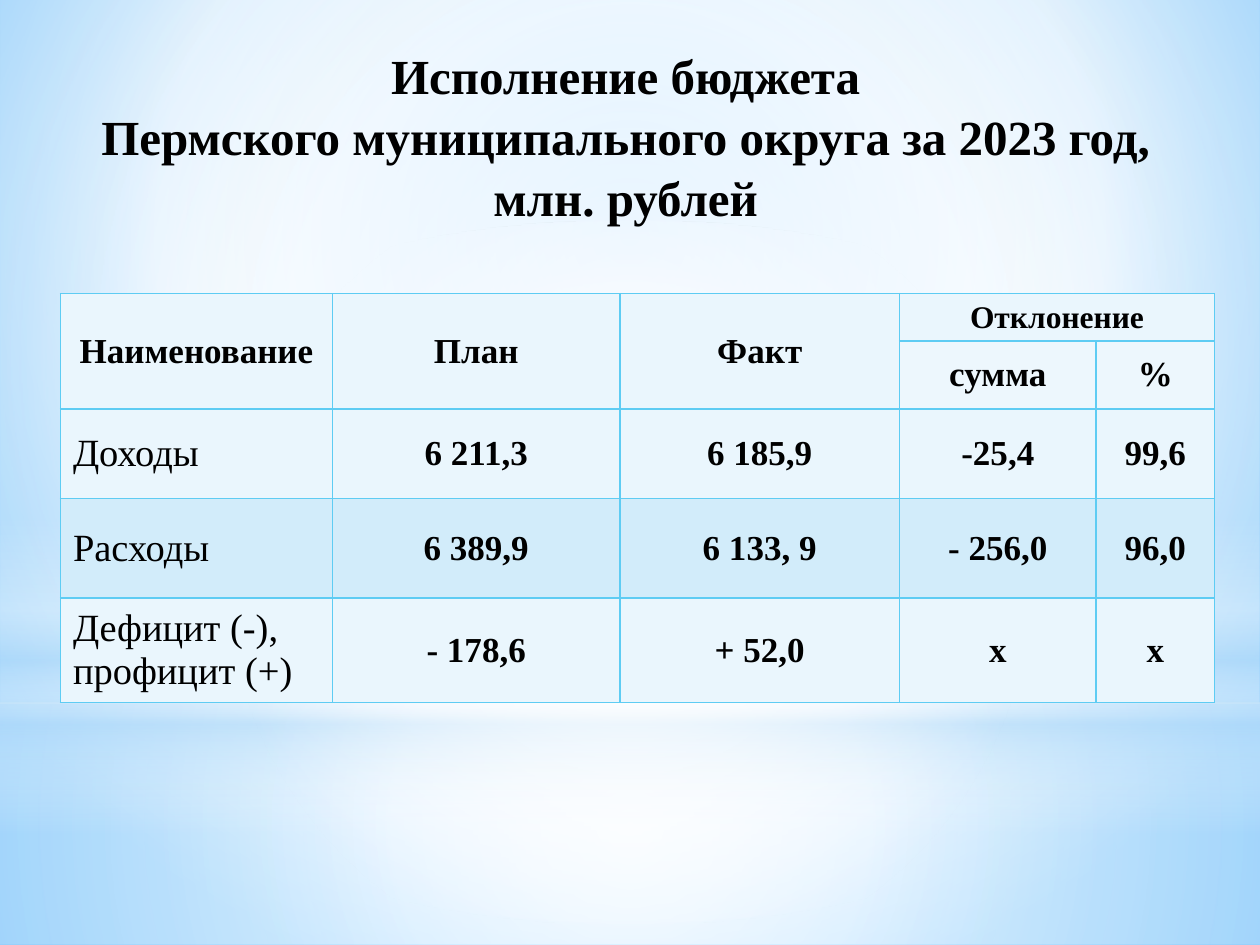
from lxml import etree
from pptx import Presentation
from pptx.dml.color import RGBColor
from pptx.enum.shapes import MSO_SHAPE
from pptx.enum.text import MSO_ANCHOR, PP_ALIGN
from pptx.oxml import parse_xml
from pptx.oxml.ns import nsdecls, qn
from pptx.util import Inches, Pt

RECT, OVAL = MSO_SHAPE.RECTANGLE, MSO_SHAPE.OVAL
MIDDLE = MSO_ANCHOR.MIDDLE
LEFT, CENTER = PP_ALIGN.LEFT, PP_ALIGN.CENTER

FONT = "Times New Roman"
BLACK = RGBColor(0x00, 0x00, 0x00)
WHITE = RGBColor(0xFF, 0xFF, 0xFF)
SKY = RGBColor(0xB4, 0xDC, 0xFA)
BG_LIGHT = RGBColor(0x9E, 0xD5, 0xFF)
BG_DEEP = RGBColor(0x5B, 0xB9, 0xFF)
BORDER = RGBColor(0x5E, 0xCC, 0xF3)
CELL = RGBColor(0xEA, 0xF6, 0xFD)
SUBHEAD = RGBColor(0xED, 0xF7, 0xFD)
BAND = RGBColor(0xD2, 0xEC, 0xFA)

CENTRE = (50, 50, 50, 50)
TITLE = [
    "Исполнение бюджета",
    "Пермского муниципального округа за 2023 год,",
    "млн. рублей",
]
COLS = [2.16, 2.28, 2.22, 1.56, 0.94]
ROWS = [0.37, 0.54, 0.71, 0.79, 0.83]
DATA = [
    ["Наименование", "План", "Факт", "Отклонение", ""],
    ["", "", "", "сумма", "%"],
    ["Доходы", "6 211,3", "6 185,9", "-25,4", "99,6"],
    ["Расходы", "6 389,9", "6 133, 9", "- 256,0", "96,0"],
    ["Дефицит (-), профицит (+)", "- 178,6", "+ 52,0", "х", "х"],
]
ROW_FILLS = [CELL, SUBHEAD, CELL, BAND, CELL]
MERGES = [((0, c), (1, c)) for c in range(3)] + [((0, 3), (0, 4))]


def set_gradient(owner, element, stops, focus=None):
    """Fill with (position, colour, opacity) stops, radial if focus is given."""
    owner.fill.solid()
    solid = next(element.iter(qn("a:solidFill")))
    stop_xml = "".join(
        f'<a:gs pos="{pos * 1000}"><a:srgbClr val="{color}">'
        f'<a:alpha val="{alpha * 1000}"/></a:srgbClr></a:gs>'
        for pos, color, alpha in stops)
    if focus:
        sides = " ".join(f'{k}="{v * 1000}"' for k, v in zip("ltrb", focus))
        shade = f'<a:path path="circle"><a:fillToRect {sides}/></a:path>'
    else:
        shade = '<a:lin ang="5400000" scaled="0"/>'
    grad = parse_xml(f'<a:gradFill {nsdecls("a")} rotWithShape="1">'
                     f'<a:gsLst>{stop_xml}</a:gsLst>{shade}</a:gradFill>')
    solid.getparent().replace(solid, grad)


def add_glow(s, kind, top, height, stops, focus=None):
    sp = s.shapes.add_shape(kind, 0, Inches(top), Inches(10), Inches(height))
    sp.shadow.inherit = False
    sp.line.fill.background()
    set_gradient(sp, sp._element.spPr, stops, focus)


def add_background(s):
    set_gradient(s.background, s._element,
                 [(0, BG_LIGHT, 100), (60, WHITE, 100), (100, BG_DEEP, 100)],
                 (20, 10, 20, 60))
    # Floor, wall, horizon and central light
    add_glow(s, RECT, 5.58, 1.92,
             [(0, WHITE, 91), (37, WHITE, 76), (100, SKY, 79)], CENTRE)
    add_glow(s, RECT, 0, 5.58,
             [(0, WHITE, 89), (48, WHITE, 62), (100, SKY, 79)], CENTRE)
    add_glow(s, RECT, 4.12, 2.5,
             [(0, WHITE, 0), (29, WHITE, 30), (45, SKY, 40),
              (55, WHITE, 26), (65, SKY, 60), (100, WHITE, 0)])
    add_glow(s, OVAL, 1.75, 5.58, [(0, WHITE, 100), (56, WHITE, 0)], CENTRE)


def format_paragraph(p, size, bold, align):
    p.alignment = align
    p.font.name = FONT
    p.font.size = Pt(size)
    p.font.bold = bold
    p.font.color.rgb = BLACK


def add_title(s):
    title = s.shapes.title
    title.left, title.top = Inches(0.12), Inches(0.33)
    title.width, title.height = Inches(9.69), Inches(1.48)
    s.shapes._spTree.append(title._element)  # in front of the background
    tf = title.text_frame
    tf.word_wrap = True
    tf.vertical_anchor = MIDDLE
    tf.text = "\n".join(TITLE)
    for p in tf.paragraphs:
        format_paragraph(p, 28, True, CENTER)
        p.line_spacing = 1.04
        p.space_before = Pt(0)


def set_borders(cell):
    tc_pr = cell._tc.get_or_add_tcPr()
    for i, side in enumerate(("lnL", "lnR", "lnT", "lnB")):
        ln = etree.Element(qn(f"a:{side}"), w=str(Pt(1)))
        fill = etree.SubElement(ln, qn("a:solidFill"))
        etree.SubElement(fill, qn("a:srgbClr"), val=str(BORDER))
        tc_pr.insert(i, ln)


def add_budget_table(s):
    table = s.shapes.add_table(len(ROWS), len(COLS), Inches(0.48), Inches(2.33),
                               Inches(sum(COLS)), Inches(sum(ROWS))).table
    for col, width in zip(table.columns, COLS):
        col.width = Inches(width)
    for row, height in zip(table.rows, ROWS):
        row.height = Inches(height)
    for first, last in MERGES:
        table.cell(*first).merge(table.cell(*last))
    for r, texts in enumerate(DATA):
        for c, text in enumerate(texts):
            cell = table.cell(r, c)
            cell.fill.solid()
            cell.fill.fore_color.rgb = ROW_FILLS[r]
            cell.vertical_anchor = MIDDLE
            set_borders(cell)
            if cell.is_spanned:
                continue
            cell.text = text
            p = cell.text_frame.paragraphs[0]
            if r > 1 and c == 0:  # row names
                format_paragraph(p, 22, False, LEFT)
            else:
                format_paragraph(p, 18 if (r, c) == (0, 3) else 20, True, CENTER)


def main():
    prs = Presentation()
    prs.slide_width, prs.slide_height = Inches(10), Inches(7.5)
    s = prs.slides.add_slide(prs.slide_layouts[5])
    add_background(s)
    add_budget_table(s)
    add_title(s)
    prs.save("out.pptx")


if __name__ == "__main__":
    main()
